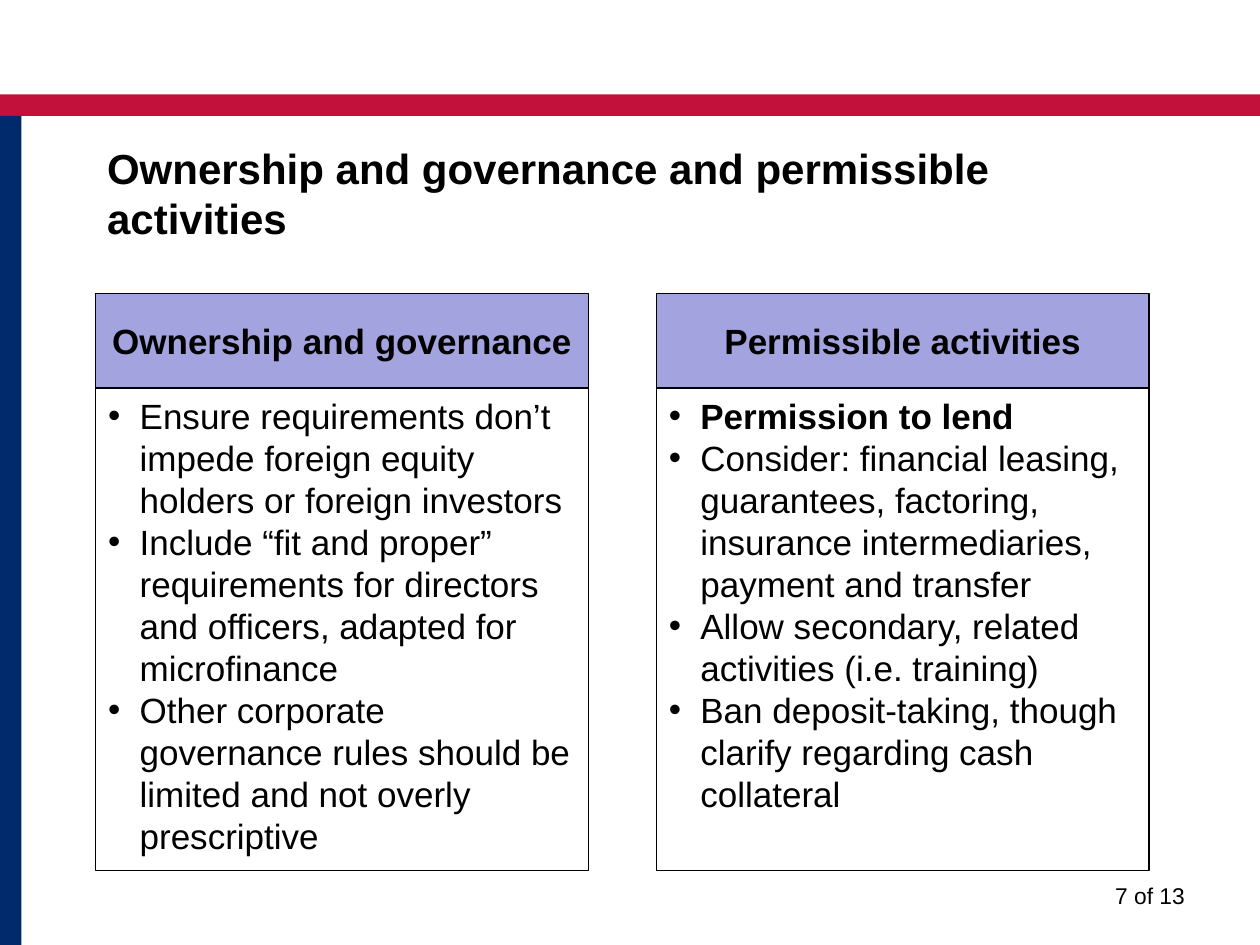
from dataclasses import dataclass

from pptx import Presentation
from pptx.dml.color import RGBColor
from pptx.enum.shapes import MSO_SHAPE as SHAPE
from pptx.enum.text import MSO_ANCHOR as ANCHOR, MSO_AUTO_SIZE as AUTO, PP_ALIGN as ALIGN
from pptx.oxml.ns import qn
from pptx.util import Inches, Pt
from lxml.etree import SubElement


@dataclass(frozen=True)
class Theme:
    font: str = "Arial"
    ink: RGBColor = RGBColor(0, 0, 0)
    red: RGBColor = RGBColor(0xC2, 0x11, 0x3A)
    navy: RGBColor = RGBColor(0x00, 0x2A, 0x6C)
    lilac: RGBColor = RGBColor(0xA3, 0xA3, 0xE0)
    title: int = 24
    body: int = 20
    footer: int = 13


THEME = Theme()

# Heading, then (text, bold) bullets
OWNERSHIP = ("Ownership and governance", [
    ("Ensure requirements don’t impede foreign equity holders or foreign investors", False),
    ("Include “fit and proper” requirements for directors and officers, "
     "adapted for microfinance", False),
    ("Other corporate governance rules should be limited and not overly prescriptive", False),
])
ACTIVITIES = ("Permissible activities", [
    ("Permission to lend", True),
    ("Consider: financial leasing, guarantees, factoring, insurance intermediaries, "
     "payment and transfer", False),
    ("Allow secondary, related activities (i.e. training)", False),
    ("Ban deposit-taking, though clarify regarding cash collateral", False),
])


def write(p, text, size, bold=False, align=ALIGN.LEFT):
    p.text = text
    p.alignment = align
    for r in p.runs:
        r.font.name = THEME.font
        r.font.size = Pt(size)
        r.font.bold = bold
        r.font.color.rgb = THEME.ink


def add_bullet(p, indent):
    pPr = p._p.get_or_add_pPr()
    pPr.set("marL", str(indent))
    pPr.set("indent", str(-indent))
    SubElement(pPr, qn("a:buFont")).set("typeface", THEME.font)
    SubElement(pPr, qn("a:buChar")).set("char", "•")


def add_rect(slide, x, y, w, h, fill=None, outlined=False):
    sp = slide.shapes.add_shape(SHAPE.RECTANGLE, x, y, w, h)
    sp.shadow.inherit = False
    if fill is None:
        sp.fill.background()
    else:
        sp.fill.solid()
        sp.fill.fore_color.rgb = fill
    if outlined:
        sp.line.color.rgb = THEME.ink
        sp.line.width = Pt(0.75)
    else:
        sp.line.fill.background()
    sp.text_frame.word_wrap = True
    return sp


def add_frame(slide, x, y, w, h):
    """Red band across the top, navy band down the left side."""
    band = Inches(0.17)
    add_rect(slide, x, y, w, band, THEME.red)
    add_rect(slide, x, y + band, band, h - band, THEME.navy)


def add_title(slide, x, y, w, h):
    sp = slide.shapes.title
    sp.left, sp.top, sp.width, sp.height = x, y, w, h
    tf = sp.text_frame
    tf.word_wrap = True
    tf.auto_size = AUTO.NONE
    tf.vertical_anchor = ANCHOR.TOP
    write(tf.paragraphs[0], "Ownership and governance and permissible activities",
          THEME.title, bold=True)


def add_panel(slide, x, y, w, h, heading, bullets):
    """Filled heading above an outlined list."""
    head_h = Inches(0.75)
    head = add_rect(slide, x, y, w, head_h, THEME.lilac, outlined=True)
    head.text_frame.vertical_anchor = ANCHOR.MIDDLE
    write(head.text_frame.paragraphs[0], heading, THEME.body, True, ALIGN.CENTER)

    body = add_rect(slide, x, y + head_h, w, h - head_h, outlined=True)
    tf = body.text_frame
    tf.vertical_anchor = ANCHOR.TOP
    for i, (text, bold) in enumerate(bullets):
        p = tf.add_paragraph() if i else tf.paragraphs[0]
        add_bullet(p, Inches(0.25))
        write(p, text, THEME.body, bold)


def add_page_number(slide, x, y, w, h):
    tf = slide.shapes.add_textbox(x, y, w, h).text_frame
    tf.word_wrap = True
    write(tf.paragraphs[0], "7 of 13", THEME.footer, align=ALIGN.RIGHT)


def main():
    prs = Presentation()
    prs.slide_width, prs.slide_height = Inches(10), Inches(7.5)
    slide = prs.slides.add_slide(prs.slide_layouts[5])  # title only

    add_frame(slide, 0, Inches(0.75), prs.slide_width, Inches(6.75))
    add_title(slide, Inches(0.75), Inches(1.08), Inches(8.5), Inches(0.67))

    # Two equal panels side by side
    left, width, gap = Inches(0.76), Inches(3.91), Inches(0.54)
    for col, panel in enumerate((OWNERSHIP, ACTIVITIES)):
        add_panel(slide, left + col * (width + gap), Inches(2.33), width, Inches(4.58), *panel)

    add_page_number(slide, Inches(7.17), Inches(6.95), Inches(2.33), Inches(0.4))
    prs.save("out.pptx")


if __name__ == "__main__":
    main()
